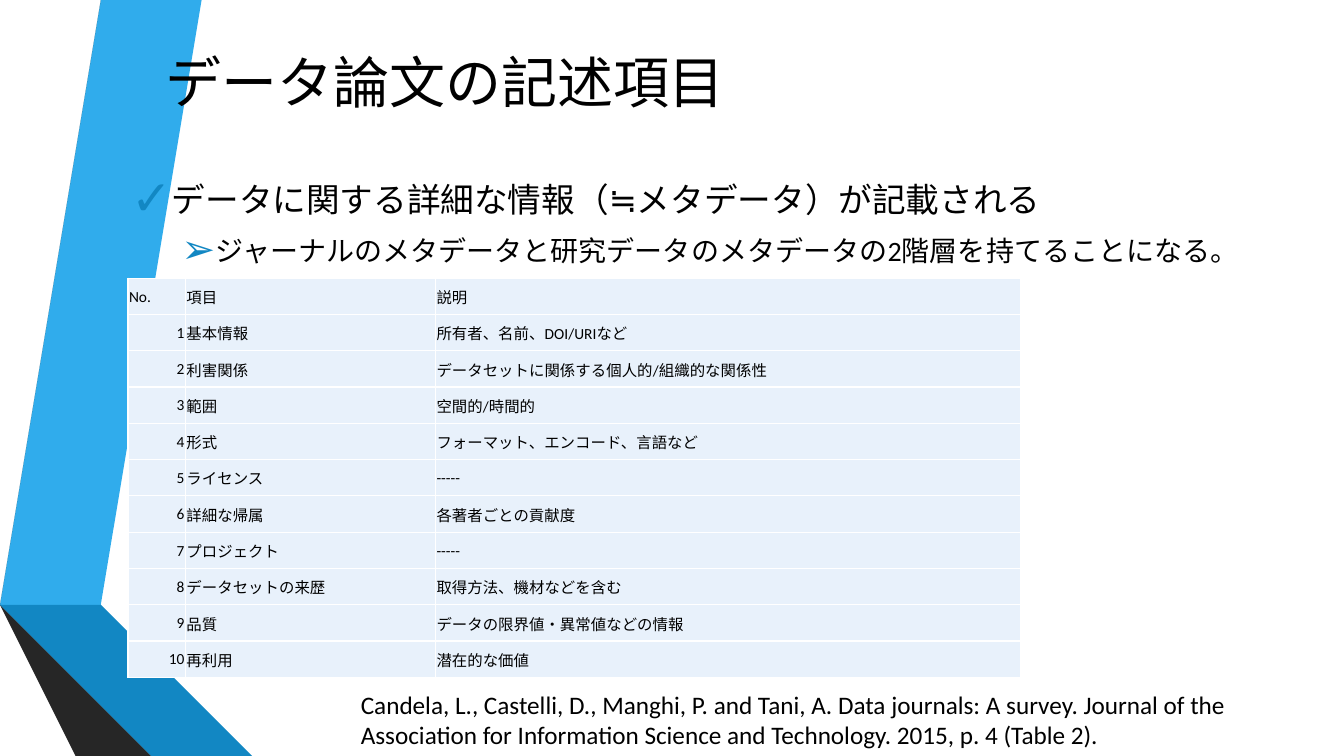
from lxml import etree
from pptx import Presentation
from pptx import util as u
from pptx.dml.color import RGBColor
from pptx.enum import text
from pptx.oxml.ns import qn

COLORS = {
    "ink": "000000", "cell": "E8F1FB", "bullet": "1287C3",
    "sky": "30ACEC", "gray": "595959", "black_edge": "262626",
    "navy_edge": "0C5A82", "blue": "1287C3", "charcoal": "404040",
}
FONT = "Calibri"

# Points are inches from the left and top of the ribbon's box.
RIBBON = [
    ("sky", [(0.5, 5.78), (0.77, 5.83), (1.73, 0), (1.45, 0)]),
    ("gray", [(1.39, 0), (1.11, 0), (0.16, 5.73), (0.44, 5.77)]),
    ("black_edge", [(0.16, 5.73), (1.45, 7.5), (1.51, 7.5)]),
    ("navy_edge", [(0.5, 5.79), (2.08, 7.5), (2.14, 7.5)]),
    ("blue", [(0.5, 5.78), (2.14, 7.5), (2.83, 7.5), (0.77, 5.83)]),
    ("charcoal", [(2.02, 7.5), (0.48, 5.83), (0.43, 5.77), (0.16, 5.73), (1.51, 7.5)]),
]
BULLETS = [
    ("データに関する詳細な情報（≒メタデータ）が記載される", "✓", 24, 0.31),
    ("ジャーナルのメタデータと研究データのメタデータの2階層を持てることになる。", "➢", 20, 0.81),
]
HEADER = ("No.", "項目", "説明")
ITEMS = [
    ("基本情報", "所有者、名前、DOI/URIなど"),
    ("利害関係", "データセットに関係する個人的/組織的な関係性"),
    ("範囲", "空間的/時間的"),
    ("形式", "フォーマット、エンコード、言語など"),
    ("ライセンス", "-----"),
    ("詳細な帰属", "各著者ごとの貢献度"),
    ("プロジェクト", "-----"),
    ("データセットの来歴", "取得方法、機材などを含む"),
    ("品質", "データの限界値・異常値などの情報"),
    ("再利用", "潜在的な価値"),
]
CITATION = (
    "Candela, L., Castelli, D., Manghi, P. and Tani, A. Data journals: A survey. "
    "Journal of the Association for Information Science and Technology. "
    "2015, p. 4 (Table 2)."
)


def rgb(name):
    return RGBColor.from_string(COLORS[name])


def write(paragraph, words, size, color="ink", align=text.PP_ALIGN.LEFT):
    paragraph.alignment = align
    run = paragraph.add_run()
    run.text = words
    run.font.size = u.Pt(size)
    run.font.name = FONT
    run.font.color.rgb = rgb(color)


def place(shape, left, top, width, height):
    shape.left, shape.top = u.Inches(left), u.Inches(top)
    shape.width, shape.height = u.Inches(width), u.Inches(height)


def set_bullet(paragraph, mark, margin, hanging=0.31):
    props = paragraph._p.get_or_add_pPr()
    props.set("marL", str(u.Inches(margin)))
    props.set("indent", str(-u.Inches(hanging)))
    color = etree.SubElement(props, qn("a:buClr"))
    etree.SubElement(color, qn("a:srgbClr"), val=COLORS["bullet"])
    etree.SubElement(props, qn("a:buSzPct"), val="145000")
    etree.SubElement(props, qn("a:buFont"), typeface=FONT)
    etree.SubElement(props, qn("a:buChar"), char=mark)


def add_ribbon(slide, left, top):
    for color, points in RIBBON:
        (start_x, start_y), *rest = [(left + x, top + y) for x, y in points]
        outline = slide.shapes.build_freeform(start_x, start_y, scale=u.Inches(1))
        outline.add_line_segments(rest, close=True)
        facet = outline.convert_to_shape()
        facet.shadow.inherit = False
        facet.fill.solid()
        facet.fill.fore_color.rgb = rgb(color)
        facet.line.fill.background()


def prepare_placeholder(slide, placeholder, box):
    """Place the placeholder in front of the ribbon, with centred anchoring."""
    place(placeholder, *box)
    slide.shapes._spTree.append(placeholder._element)
    frame = placeholder.text_frame
    frame.word_wrap = True
    frame.auto_size = text.MSO_AUTO_SIZE.NONE
    frame.vertical_anchor = text.MSO_ANCHOR.MIDDLE
    return frame


def add_title(slide, box):
    frame = prepare_placeholder(slide, slide.shapes.title, box)
    write(frame.paragraphs[0], "データ論文の記述項目", 40)


def add_bullets(slide, box):
    frame = prepare_placeholder(slide, slide.placeholders[1], box)
    for level, (words, mark, size, margin) in enumerate(BULLETS):
        paragraph = frame.add_paragraph() if level else frame.paragraphs[0]
        paragraph.level = level
        paragraph.space_before = u.Pt(0.2 * size if level else 0)
        paragraph.space_after = u.Pt(6)
        set_bullet(paragraph, mark, margin)
        write(paragraph, words, size)


def add_items_table(slide, left, top, widths, row_height):
    rows = [HEADER] + [(str(n), *item) for n, item in enumerate(ITEMS, 1)]
    table = slide.shapes.add_table(
        len(rows), len(widths), u.Inches(left), u.Inches(top),
        u.Inches(sum(widths)), u.Inches(row_height * len(rows))).table
    table.first_row = table.horz_banding = False
    for column, width in zip(table.columns, widths):
        column.width = u.Inches(width)
    for r, row in enumerate(rows):
        table.rows[r].height = u.Inches(row_height)
        for c, words in enumerate(row):
            cell = table.cell(r, c)
            cell.fill.solid()
            cell.fill.fore_color.rgb = rgb("cell")
            cell.vertical_anchor = text.MSO_ANCHOR.MIDDLE
            cell.margin_left = cell.margin_right = cell.margin_top = u.Inches(0.01)
            cell.margin_bottom = 0
            is_number = r > 0 and c == 0
            write(cell.text_frame.paragraphs[0], words, 11,
                  align=text.PP_ALIGN.RIGHT if is_number else text.PP_ALIGN.LEFT)


def add_citation(slide, box):
    frame = slide.shapes.add_textbox(*map(u.Inches, box)).text_frame
    frame.word_wrap = True
    frame.auto_size = text.MSO_AUTO_SIZE.SHAPE_TO_FIT_TEXT
    write(frame.paragraphs[0], CITATION, 18)


def main():
    deck = Presentation()
    deck.slide_width, deck.slide_height = u.Inches(13.33), u.Inches(7.5)
    slide = deck.slides.add_slide(deck.slide_layouts[1])
    add_ribbon(slide, 0, 0)
    add_title(slide, (1.54, 0.3, 11, 1))
    add_bullets(slide, (1.2, 0.54, 11.5, 3.34))
    add_items_table(slide, 1.27, 2.76, (0.57, 2.48, 5.8), 0.36)
    add_citation(slide, (3.48, 6.79, 9.62, 0.71))
    deck.save("out.pptx")


if __name__ == "__main__":
    main()
